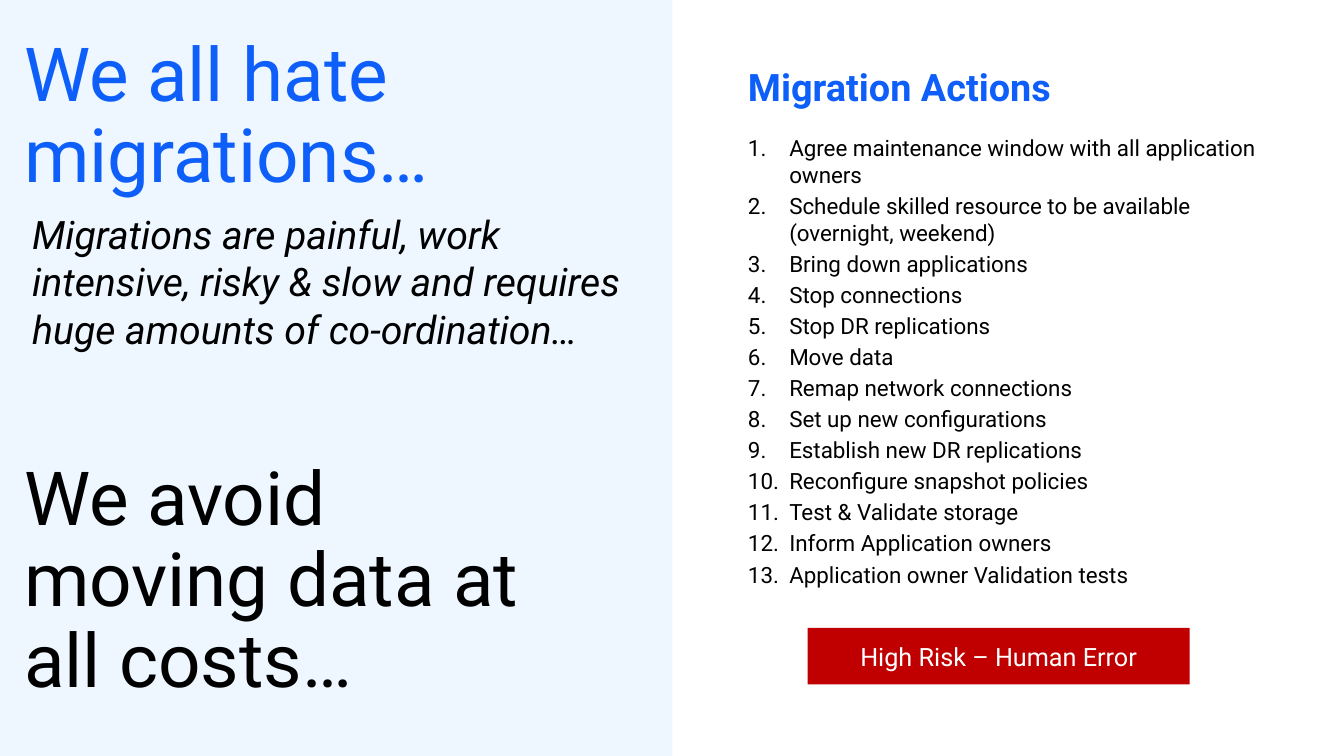
from lxml import etree
from pptx import Presentation
from pptx.dml.color import RGBColor
from pptx.enum.shapes import MSO_SHAPE
from pptx.enum.text import MSO_ANCHOR, PP_ALIGN
from pptx.oxml.ns import qn
from pptx.util import Inches, Pt

COLOURS = {
    "panel": "EEF7FF",
    "blue": "0E5FFA",
    "black": "000000",
    "red": "C00000",
    "white": "FFFFFF",
}
FONT = "Roboto"
LIST_INDENT = Inches(0.41)

ACTIONS = [
    "Agree maintenance window with all application owners",
    "Schedule skilled resource to be available (overnight, weekend)",
    "Bring down applications",
    "Stop connections",
    "Stop DR replications",
    "Move data",
    "Remap network connections",
    "Set up new configurations",
    "Establish new DR replications",
    "Reconfigure snapshot policies",
    "Test & Validate storage",
    "Inform Application owners",
    "Application owner Validation tests",
]


def add_span(para, text, size, colour, bold=False, italic=False):
    span = para.add_run()
    span.text = text
    span.font.name = FONT
    span.font.size = Pt(size)
    span.font.bold = bold
    span.font.italic = italic
    span.font.color.rgb = RGBColor.from_string(COLOURS[colour])


def add_text_frame(page, left, top, width, height, inset=True):
    box = page.shapes.add_textbox(Inches(left), Inches(top), Inches(width), Inches(height))
    frame = box.text_frame
    frame.word_wrap = True
    if not inset:
        remove_insets(frame)
    return frame


def remove_insets(frame):
    frame.margin_left = frame.margin_right = 0
    frame.margin_top = frame.margin_bottom = 0


def add_rectangle(page, left, top, width, height, colour):
    rectangle = page.shapes.add_shape(
        MSO_SHAPE.RECTANGLE, Inches(left), Inches(top), Inches(width), Inches(height))
    rectangle.shadow.inherit = False
    rectangle.fill.solid()
    rectangle.fill.fore_color.rgb = RGBColor.from_string(COLOURS[colour])
    rectangle.line.fill.background()
    return rectangle


def number_paragraph(para):
    """Give the paragraph a hanging indent and an automatic number."""
    properties = para._p.get_or_add_pPr()
    properties.set("marL", str(LIST_INDENT))
    properties.set("indent", str(-LIST_INDENT))
    numbering = etree.SubElement(properties, qn("a:buAutoNum"))
    numbering.set("type", "arabicPeriod")


def add_headline(page, left, top, width, height, text, colour):
    para = add_text_frame(page, left, top, width, height).paragraphs[0]
    para.line_spacing = 0.9
    add_span(para, text, 53.3, colour)


def add_message_panel(page, left, top, width, height):
    add_rectangle(page, left, top, width, height, "panel")
    add_headline(page, left + 0.16, top + 0.32, 5.32, 1.7, "We all hate migrations…", "blue")
    frame = add_text_frame(page, left + 0.34, top + 2.09, 6, 1.12, inset=False)
    add_span(frame.paragraphs[0],
             "Migrations are painful, work intensive, risky & slow "
             "and requires huge amounts of co-ordination…",
             28, "black", italic=True)
    add_headline(page, left + 0.16, top + 4.53, 5.32, 1.7,
                 "We avoid moving data at all costs…", "black")


def add_action_list(page, left, top, width, height):
    frame = add_text_frame(page, left, top, width, height)
    add_span(frame.paragraphs[0], "Migration Actions", 27, "blue", bold=True)
    for index, action in enumerate(ACTIONS):
        para = frame.add_paragraph()
        number_paragraph(para)
        para.space_before = Pt(3 if index else 18)
        add_span(para, action, 16, "black")


def add_risk_banner(page, left, top, width, height):
    banner = add_rectangle(page, left, top, width, height, "red")
    frame = banner.text_frame
    frame.word_wrap = True
    frame.vertical_anchor = MSO_ANCHOR.MIDDLE
    remove_insets(frame)
    para = frame.paragraphs[0]
    para.alignment = PP_ALIGN.CENTER
    add_span(para, "High Risk – Human Error", 18, "white")


def main():
    deck = Presentation()
    deck.slide_width = Inches(13.33)
    deck.slide_height = Inches(7.5)
    page = deck.slides.add_slide(deck.slide_layouts[6])
    add_message_panel(page, -0.02, 0, 6.69, 7.5)
    add_action_list(page, 7.32, 0.58, 5.64, 5.65)
    add_risk_banner(page, 8.01, 6.23, 3.79, 0.56)
    deck.save("out.pptx")


if __name__ == "__main__":
    main()
